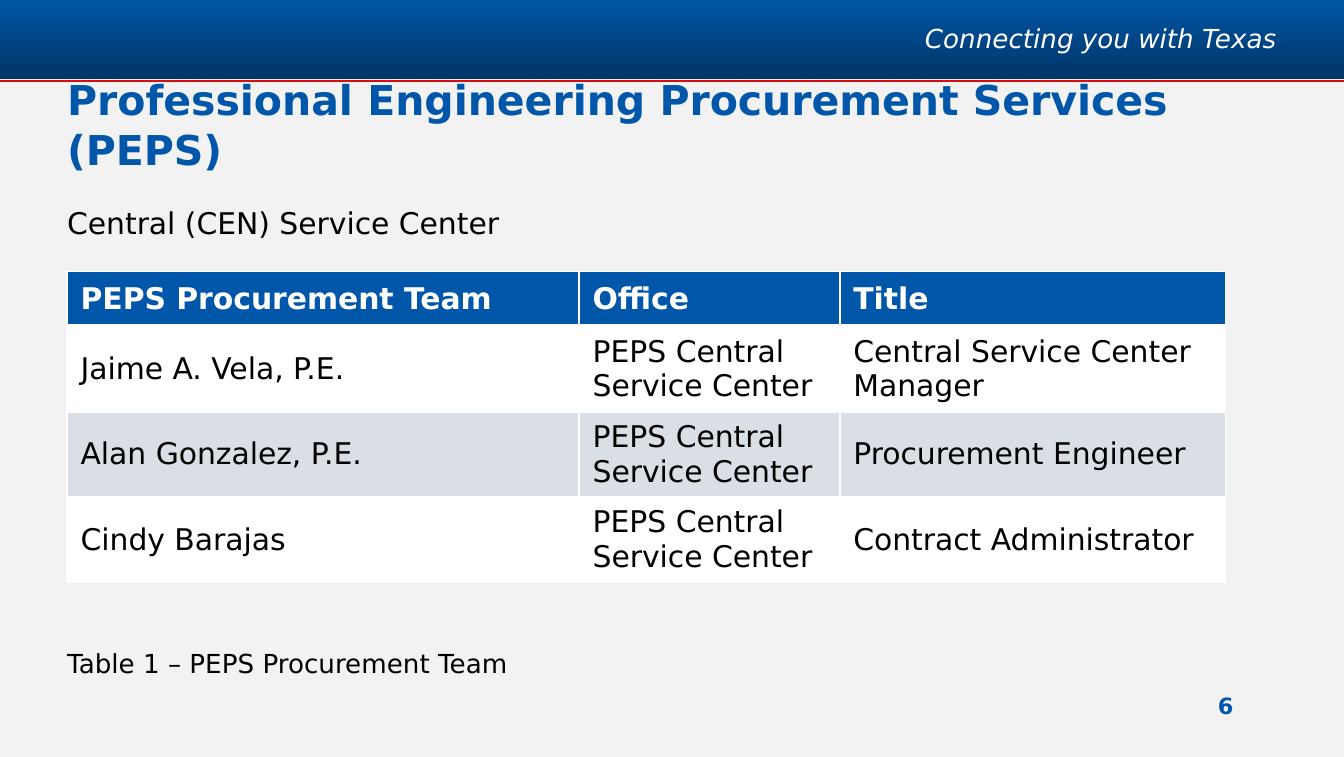
from lxml import etree
from pptx import Presentation
from pptx import util as u
from pptx.dml.color import RGBColor
from pptx.enum import shapes, text
from pptx.oxml.ns import qn

FONT = "DejaVu Sans"
BLUE = "0056A9"
WHITE = "FFFFFF"
BLACK = "000000"
STRIPE = "DADEE5"

TEAM = [
    ("PEPS Procurement Team", "Office", "Title"),
    ("Jaime A. Vela, P.E.", "PEPS Central Service Center", "Central Service Center Manager"),
    ("Alan Gonzalez, P.E.", "PEPS Central Service Center", "Procurement Engineer"),
    ("Cindy Barajas", "PEPS Central Service Center", "Contract Administrator"),
]


def color(value):
    return RGBColor.from_string(value)


def inches(box):
    return [u.Inches(length) for length in box]


def write(frame, words, size=16, ink=BLACK, bold=False, italic=False,
          align=text.PP_ALIGN.LEFT, spacing=None, after=None):
    paragraph = frame.paragraphs[0]
    paragraph.alignment = align
    if spacing is not None:
        paragraph.line_spacing = spacing
    if after is not None:
        paragraph.space_after = u.Pt(after)
    run = paragraph.add_run()
    run.text = words
    run.font.name = FONT
    run.font.size = u.Pt(size)
    run.font.color.rgb = color(ink)
    run.font.bold = bold
    run.font.italic = italic


def add_label(slide, box, words, anchor=text.MSO_ANCHOR.BOTTOM, wrap=True, **style):
    frame = slide.shapes.add_textbox(*inches(box)).text_frame
    frame.word_wrap = wrap
    frame.vertical_anchor = anchor
    frame.margin_left = frame.margin_right = 0
    frame.margin_top = frame.margin_bottom = 0
    write(frame, words, **style)


def add_banner(slide, box):
    left, top, width, height = box
    band = slide.shapes.add_shape(shapes.MSO_SHAPE.RECTANGLE, *inches(box))
    band.shadow.inherit = False
    band.line.fill.background()
    band.fill.gradient()
    band.fill.gradient_angle = 270
    for stop, shade in zip(band.fill.gradient_stops, ("0057A8", "003567")):
        stop.color.rgb = color(shade)

    rule_y = top + height + 0.01
    rule = slide.shapes.add_connector(
        shapes.MSO_CONNECTOR.STRAIGHT, *inches((left, rule_y, left + width, rule_y)))
    rule.line.color.rgb = color("D90D0D")
    rule.line.width = u.Pt(1)
    etree.SubElement(rule._element.spPr, qn("a:effectLst"))

    add_label(slide, (left + width - 3.71, 0, 3.2, 0.6), "Connecting you with Texas",
              anchor=text.MSO_ANCHOR.MIDDLE, wrap=False, size=14, ink=WHITE,
              italic=True, align=text.PP_ALIGN.RIGHT, spacing=0.9)


def set_borders(cell, **widths):
    properties = cell._tc.get_or_add_tcPr()
    for position, (side, points) in enumerate(widths.items()):
        border = etree.Element(qn(f"a:ln{side}"), w=str(u.Pt(points)))
        fill = etree.SubElement(border, qn("a:solidFill"))
        etree.SubElement(fill, qn("a:srgbClr"), val=WHITE)
        properties.insert(position, border)


def add_team_table(slide, box):
    table = slide.shapes.add_table(len(TEAM), len(TEAM[0]), *inches(box)).table
    for column, width in zip(table.columns, (3.81, 1.94, 2.87)):
        column.width = u.Inches(width)
    for row_number, people in enumerate(TEAM):
        header = row_number == 0
        table.rows[row_number].height = u.Inches(0.41)
        for column_number, words in enumerate(people):
            cell = table.cell(row_number, column_number)
            cell.vertical_anchor = text.MSO_ANCHOR.MIDDLE
            cell.fill.solid()
            cell.fill.fore_color.rgb = color(
                BLUE if header else STRIPE if row_number % 2 == 0 else WHITE)
            set_borders(cell, L=1, R=1, T=3 if row_number == 1 else 1, B=3 if header else 1)
            write(cell.text_frame, words, ink=WHITE if header else BLACK, bold=header)


def add_content(slide, box):
    left, top, width, height = box
    add_label(slide, (left, top, width, 0.32),
              "Professional Engineering Procurement Services (PEPS)",
              size=22, ink=BLUE, bold=True)
    add_label(slide, (left, top + 0.42, width, 1.09), "Central (CEN) Service Center",
              anchor=text.MSO_ANCHOR.TOP, spacing=1.5, after=10)
    add_team_table(slide, (left, top + 1.05, 8.62, 1.64))
    add_label(slide, (left, top + height - 0.34, width, 0.34),
              "Table 1 – PEPS Procurement Team", size=14, spacing=1.5, after=10)


def add_page_number(slide, box):
    add_label(slide, box, "6", wrap=False, size=12, ink=BLUE, bold=True,
              align=text.PP_ALIGN.CENTER, spacing=0.9)


def main():
    deck = Presentation()
    deck.slide_width, deck.slide_height = inches((10, 5.63))
    slide = deck.slides.add_slide(deck.slide_layouts[6])
    slide.background.fill.solid()
    slide.background.fill.fore_color.rgb = color("F2F2F2")
    add_banner(slide, (-0.01, -0.03, 10.02, 0.62))
    add_content(slide, (0.5, 0.97, 9, 4.08))
    add_page_number(slide, (8.62, 5.03, 1, 0.32))
    deck.save("out.pptx")


if __name__ == "__main__":
    main()
